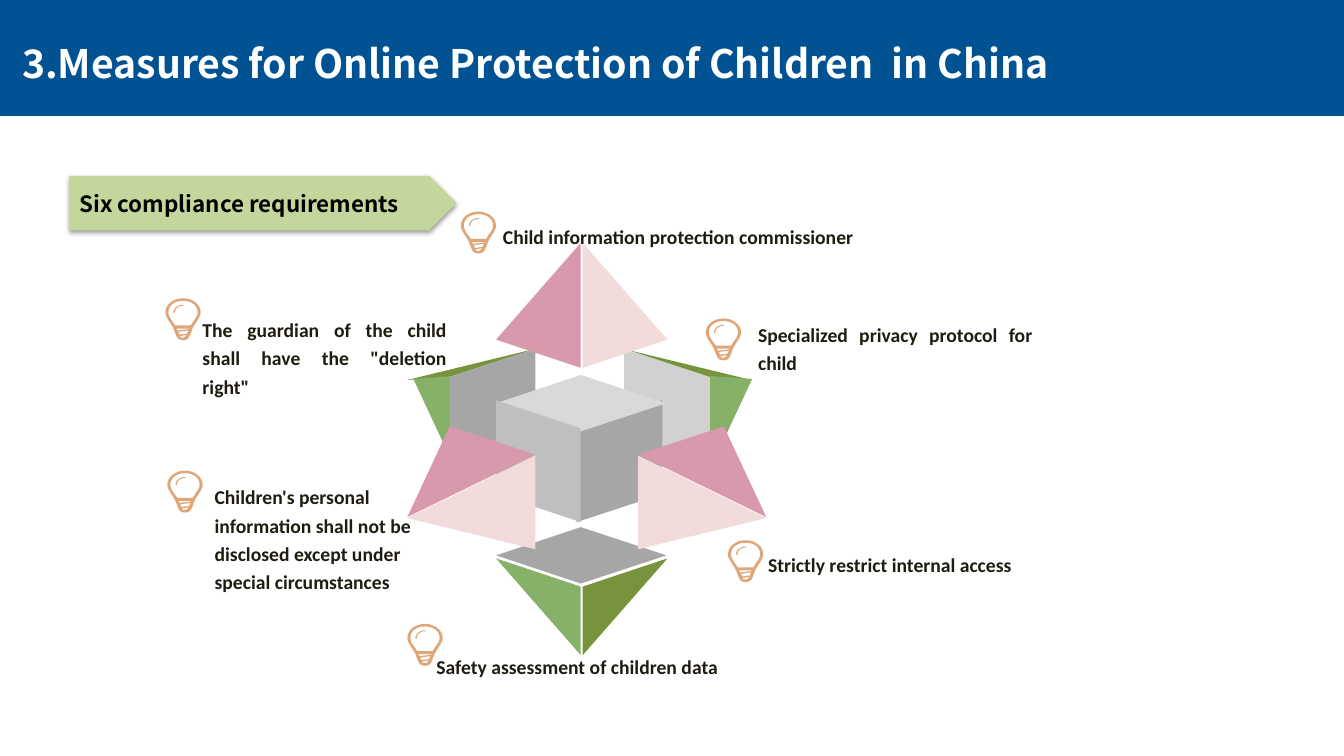
from dataclasses import dataclass
from lxml import etree
from pptx import Presentation
from pptx import util as u
from pptx.dml.color import RGBColor
from pptx.enum import shapes, text
from pptx.oxml import ns


@dataclass(frozen=True)
class Theme:
    blue: str = "005292"
    lime: str = "C3D69B"
    olive: str = "77933C"
    green: str = "87B169"
    rose: str = "D899AC"
    blush: str = "F2DCDB"
    pale: str = "D9D9D9"
    light: str = "D1D1D1"
    mid: str = "BFBFBF"
    dark: str = "A6A6A6"
    amber: str = "DFA679"
    ink: str = "1E1C11"
    black: str = "000000"
    white: str = "FFFFFF"
    head: str = "Noto Sans CJK SC"
    body: str = "Calibri"
    title: int = 28
    tag: int = 16
    label: int = 14


def apply(item, fmt):
    for key, value in fmt.items():
        setattr(item, key, value)


def curve(steps, count=8):
    points = [steps[0]]
    for step in steps[1:]:
        if len(step) == 2:
            points.append(step)
            continue
        ax, ay = points[-1]
        bx, by, cx, cy, dx, dy = step
        for n in range(1, count + 1):
            t = n / count
            s = 1 - t
            w = (s ** 3, 3 * s * s * t, 3 * s * t * t, t ** 3)
            points.append((
                w[0] * ax + w[1] * bx + w[2] * cx + w[3] * dx,
                w[0] * ay + w[1] * by + w[2] * cy + w[3] * dy,
            ))
    return points


class Page:
    def __init__(self, slide, theme):
        self.slide = slide
        self.items = slide.shapes
        self.theme = theme

    def paint(self, shape, color):
        shape.shadow.inherit = False
        shape.fill.solid()
        shape.fill.fore_color.rgb = RGBColor.from_string(color)
        shape.line.fill.background()

    def letter(self, shape, words, size, face, color, frame, para):
        box = shape.text_frame
        apply(box, {"word_wrap": True, "auto_size": text.MSO_AUTO_SIZE.NONE, **frame})
        line = box.paragraphs[0]
        line.text = words
        apply(line, para)
        apply(line.font, {"size": u.Pt(size), "name": face, "bold": True})
        line.font.color.rgb = RGBColor.from_string(color)

    def block(self, kind, area, color):
        shape = self.items.add_shape(kind, *map(u.Inches, area))
        self.paint(shape, color)
        return shape

    def title(self, words, area):
        shape = self.items.title
        apply(shape, dict(zip(("left", "top", "width", "height"), map(u.Inches, area))))
        self.letter(shape, words, self.theme.title, self.theme.head, self.theme.white,
                    {"vertical_anchor": text.MSO_ANCHOR.TOP},
                    {"alignment": text.PP_ALIGN.LEFT})

    def banner(self, area):
        bar = self.block(shapes.MSO_SHAPE.RECTANGLE, area, self.theme.blue)
        self.items.title._element.addprevious(bar._element)

    def tag(self, words, area):
        shape = self.block(shapes.MSO_SHAPE.PENTAGON, area, self.theme.lime)
        shape.line.color.rgb = RGBColor.from_string(self.theme.lime)
        shape.line.width = u.Pt(0.75)
        effect = shape._element.spPr.find(ns.qn("a:effectLst"))
        shade = etree.SubElement(effect, ns.qn("a:outerShdw"), blurRad="40000",
                                 dist="20000", dir="5400000", rotWithShape="0")
        tint = etree.SubElement(shade, ns.qn("a:srgbClr"), val=self.theme.black)
        etree.SubElement(tint, ns.qn("a:alpha"), val="38000")
        self.letter(shape, words, self.theme.tag, self.theme.head, self.theme.black,
                    {"vertical_anchor": text.MSO_ANCHOR.MIDDLE},
                    {"alignment": text.PP_ALIGN.LEFT})

    def label(self, words, area, align):
        shape = self.items.add_textbox(*map(u.Inches, area))
        self.letter(shape, words, self.theme.label, self.theme.body, self.theme.ink,
                    {}, {"alignment": align, "line_spacing": 1.2})

    def outline(self, loops, color, items=None):
        loops = [[(u.Inches(x), u.Inches(y)) for x, y in loop] for loop in loops]
        pen = (items or self.items).build_freeform(*loops[0][0])
        for n, loop in enumerate(loops):
            if n:
                pen.move_to(*loop[0])
            pen.add_line_segments(loop[1:], close=True)
        self.paint(pen.convert_to_shape(), color)

    def bulb(self, left, top):
        items = self.items.add_group_shape().shapes
        for part in (BULB, GLINT):
            loops = [[(left + x / 100, top + y / 100) for x, y in curve(loop)]
                     for loop in part]
            self.outline(loops, self.theme.amber, items)


BULB = [
    [(17.5, 0), (8, 0, 0, 6, 0, 14), (0, 19, 6, 25, 8, 30),
     (11, 37, 11, 41.5, 17.5, 41.5), (24, 41.5, 24, 37, 27, 30),
     (29, 25, 35, 19, 35, 14), (35, 6, 27, 0, 17.5, 0)],
    [(25, 27), (10, 27), (9, 26, 8, 24, 7, 23), (5, 20, 3, 17, 3, 14),
     (3, 7, 9, 2.5, 17.5, 2.5), (26, 2.5, 32, 7, 32, 14),
     (32, 17, 30, 20, 27.5, 23), (27, 24, 26, 26, 25, 27)],
    [(12, 32), (11, 30), (24, 30), (23, 30.7)],
    [(21.5, 35), (14, 36), (13, 33.2), (23, 32)],
    [(17.5, 39), (16, 39, 15, 39, 14.5, 37.5), (21, 36.3), (20, 38, 19, 39, 17.5, 39)],
]
GLINT = [[(17.5, 6.3), (12, 6.3, 8, 10, 8, 14), (8.7, 14.6), (9.4, 14),
          (9.4, 10, 13, 7.3, 17.5, 7.3), (18.2, 6.8)]]


def main():
    deck = Presentation()
    apply(deck, {"slide_width": u.Inches(13.33), "slide_height": u.Inches(7.5)})
    look = Theme()
    page = Page(deck.slides.add_slide(deck.slide_layouts[5]), look)
    page.banner((0, 0, 13.33, 1.15))
    page.title("3.Measures for Online Protection of Children  in China",
               (0.12, 0.34, 13.2, 0.57))
    page.tag("Six compliance requirements", (0.69, 1.75, 3.83, 0.53))

    faces = [
        ([(4.04, 3.77), (5.31, 3.46), (4.46, 3.74)], look.olive, 11.49, look.olive),
        ([(4.52, 4.66), (4.1, 3.76), (4.52, 3.73)], look.green, 11.56, look.green),
        ([(4.46, 4.67), (4.46, 3.74), (5.31, 3.46), (5.31, 4.39)],
         look.dark, 11.5, look.light),
        ([(5.76, 5.79), (4.92, 5.51), (5.76, 5.23), (6.61, 5.51)], look.dark, 0, None),
        ([(5.76, 6.5), (5.76, 5.82), (4.92, 5.54)], look.green, 11.54, look.olive),
        ([(5.72, 4.25), (5.72, 5.18), (6.57, 4.9), (6.57, 3.97)], look.dark, 0, None),
        ([(5.76, 3.72), (4.92, 4), (5.76, 4.28), (6.61, 4)], look.pale, 0, None),
        ([(4.92, 3.97), (4.92, 4.9), (5.76, 5.18), (5.76, 4.25)], look.mid, 0, None),
        ([(5.76, 2.41), (5.76, 3.65), (4.92, 3.37)], look.rose, 11.54, look.blush),
        ([(4.04, 5.14), (5.31, 5.45), (5.31, 4.52)], look.blush, 11.64, look.blush),
        ([(4.46, 4.23), (4.04, 5.13), (5.31, 4.51)], look.rose, 11.64, look.rose),
    ]
    for points, color, span, twin in faces:
        page.outline([points], color)
        if twin:
            page.outline([[(span - x, y) for x, y in points]], twin)

    full, left = text.PP_ALIGN.JUSTIFY, text.PP_ALIGN.LEFT
    rules = [
        ("Child information protection commissioner",
         (4.89, 2.14, 5, 0.38), full, (4.57, 2.1)),
        ("Specialized privacy protocol for child",
         (7.42, 3.11, 2.92, 0.67), full, (7, 3.16)),
        ("Strictly restrict internal access",
         (7.52, 5.39, 3.63, 0.38), full, (7.22, 5.36)),
        ("Safety assessment of children data",
         (4.23, 6.4, 5, 0.38), full, (4.04, 6.19)),
        ("Children's personal information shall not be disclosed except under "
         "special circumstances", (2.03, 4.72, 2.32, 1.23), left, (1.66, 4.67)),
        ('The guardian of the child shall have the "deletion right"',
         (1.91, 3.06, 2.62, 0.67), full, (1.64, 2.96)),
    ]
    for words, area, align, spot in rules:
        page.label(words, area, align)
        page.bulb(*spot)
    deck.save("out.pptx")


if __name__ == "__main__":
    main()
